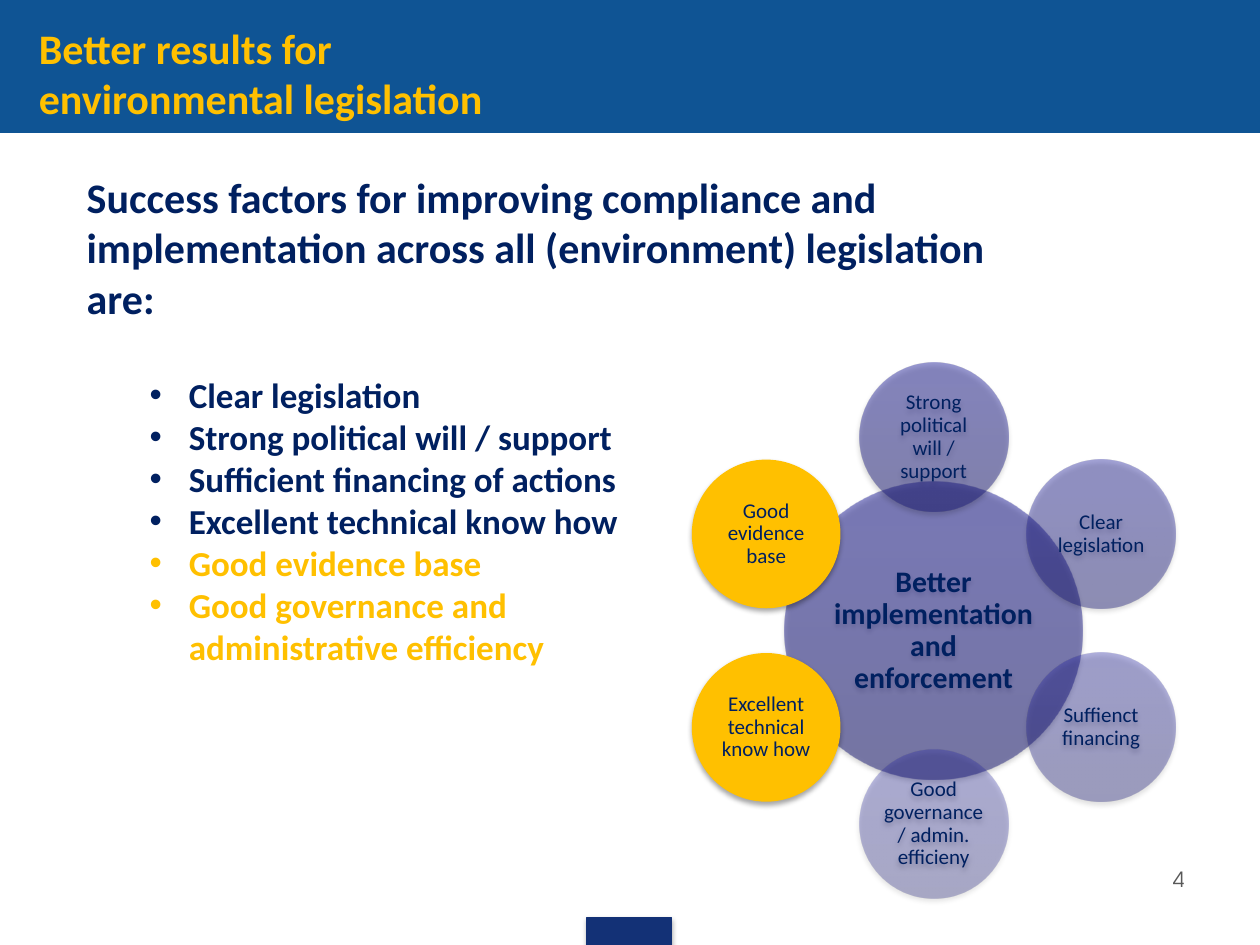
import math

from lxml import etree
from pptx import Presentation
from pptx import util as u
from pptx.dml.color import RGBColor
from pptx.enum import shapes, text
from pptx.oxml import ns

BLUE, NAVY, GOLD = "0F5494", "002060", "FFC000"


def rgb(value):
    """Return the colour for a hex string."""
    return RGBColor.from_string(value)


def sub(parent, tag, **attrs):
    """Append a DrawingML element and return it."""
    el = etree.SubElement(parent, ns.qn(tag))
    for key, value in attrs.items():
        el.set(key, str(value))
    return el


def add_run(p, words, size, color, bold=False, font="Calibri"):
    """Add a formatted run to a paragraph."""
    r = p.add_run()
    r.text = words
    r.font.name, r.font.size, r.font.bold = font, u.Pt(size), bold
    r.font.color.rgb = rgb(color)


def add_shadow(sp):
    """Give a shape a soft shadow below it."""
    sp.shadow.inherit = False
    effects = sp._element.spPr.find(ns.qn("a:effectLst"))
    shadow = sub(effects, "a:outerShdw", blurRad=u.Pt(3.1), dist=u.Pt(1.8),
                 dir=5400000, rotWithShape=0)
    sub(sub(shadow, "a:srgbClr", val="000000"), "a:alpha", val=35000)


def fill_gradient(sp, colors, opacity):
    """Fill a shape with a translucent upward gradient."""
    geometry = sp._element.spPr.find(ns.qn("a:prstGeom"))
    grad = etree.Element(ns.qn("a:gradFill"), rotWithShape="1")
    stops = sub(grad, "a:gsLst")
    for pos, color in zip((0, 80, 100), colors):
        stop = sub(stops, "a:gs", pos=pos * 1000)
        sub(sub(stop, "a:srgbClr", val=color), "a:alpha", val=opacity * 1000)
    sub(grad, "a:lin", ang=16200000, scaled=0)
    geometry.addnext(grad)


def add_bar(s, left, top, width, height, color):
    """Draw a solid bar and return it."""
    sp = s.shapes.add_shape(shapes.MSO_SHAPE.RECTANGLE, u.Inches(left),
                            u.Inches(top), u.Inches(width), u.Inches(height))
    sp.shadow.inherit = False
    sp.fill.solid()
    sp.fill.fore_color.rgb = sp.line.color.rgb = rgb(color)
    sp.line.width = u.Pt(0.75)
    return sp


def add_textbox(s, left, top, width, height):
    """Add a wrapping text box and return its frame."""
    sp = s.shapes.add_textbox(u.Inches(left), u.Inches(top),
                              u.Inches(width), u.Inches(height))
    sp.text_frame.word_wrap = True
    return sp.text_frame


def add_header(s, left, top, width, height):
    """Draw the title band."""
    add_bar(s, left, top, width, height, BLUE)
    tf = add_textbox(s, left + 0.21, top + 0.13, 3.85, 0.91)
    add_run(tf.paragraphs[0], "Better results for environmental legislation",
            24, GOLD, True)


def add_factors(s, left, top, width, height):
    """Write the lead sentence and its bulleted factors."""
    factors = [
        (["Clear legislation"], NAVY),
        (["Strong political will / support"], NAVY),
        (["Sufficient financing of actions"], NAVY),
        (["Excellent technical know how"], NAVY),
        (["Good evidence base"], GOLD),
        (["Good governance and", "administrative efficiency"], GOLD),
    ]
    tf = add_textbox(s, left, top, width, height)
    add_run(tf.paragraphs[0], "Success factors for improving compliance and "
            "implementation across all (environment) legislation are:",
            24, NAVY, True)
    for i, (lines, color) in enumerate(factors):
        p = tf.add_paragraph()
        p.level = 1
        pPr = p._p.get_or_add_pPr()
        pPr.set("marL", str(u.Inches(0.81)))
        pPr.set("indent", str(u.Inches(-0.31)))
        sub(pPr, "a:buFont", typeface="Arial")
        sub(pPr, "a:buChar", char="•")
        if i == 0:
            p.space_before = u.Pt(29)
        for j, line in enumerate(lines):
            if j:
                p.add_line_break()
            add_run(p, line, 20, color, True)


def add_circle(s, cx, cy, size, label, font_size, colors, opacity, bold=False):
    """Draw one labelled circle around a centre point."""
    sp = s.shapes.add_shape(shapes.MSO_SHAPE.OVAL, u.Inches(cx - size / 2),
                            u.Inches(cy - size / 2), u.Inches(size), u.Inches(size))
    sp.line.fill.background()
    if opacity == 100:
        sp.fill.solid()
        sp.fill.fore_color.rgb = rgb(colors[0])
    else:
        fill_gradient(sp, colors, opacity)
    add_shadow(sp)
    tf = sp.text_frame
    tf.word_wrap = True
    tf.vertical_anchor = text.MSO_ANCHOR.MIDDLE
    tf.margin_left = tf.margin_right = u.Inches(0.02)
    tf.margin_top = tf.margin_bottom = u.Inches(0.02)
    p = tf.paragraphs[0]
    p.alignment = text.PP_ALIGN.CENTER
    p.line_spacing = 0.9
    add_run(p, label, font_size, NAVY, bold)


def add_radial(s, left, top, width, height):
    """Draw the hub with six circles spaced evenly clockwise from the top."""
    satellites = [
        ("Strong political will / support", ("191974", "202097", "1E1E9A"), 45),
        ("Clear legislation", ("191976", "212199", "1F1F9C"), 40),
        ("Suffienct financing", ("1A1A78", "22229C", "1F1F9F"), 35),
        ("Good governance / admin. efficieny", ("1A1A7A", "22229E", "2020A2"), 30),
        ("Excellent technical know how", (GOLD,), 100),
        ("Good evidence base", (GOLD,), 100),
    ]
    cx, cy = left + width / 2, top + height / 2
    size = 1.18
    radius = (height - size) / 2
    add_circle(s, cx, cy, 2 * size, "Better implementation and enforcement", 17,
               ("181872", "1F1F94", "1D1D97"), 50, True)
    for i, (label, colors, opacity) in enumerate(satellites):
        angle = i * math.tau / len(satellites)
        add_circle(s, cx + radius * math.sin(angle), cy - radius * math.cos(angle),
                   size, label, 12, colors, opacity)


def add_footer(s, left, top, width, height):
    """Draw the bottom tab and the page number."""
    add_shadow(add_bar(s, left + 4.66, top + 0.45, 0.67, 0.22, "133176"))
    tf = add_textbox(s, left + width - 2.83, top, 2.33, 0.52)
    p = tf.paragraphs[0]
    p.alignment = text.PP_ALIGN.RIGHT
    add_run(p, "4", 12, "595959", font="TeX Gyre Adventor")


def main():
    """Build and save the slide."""
    prs = Presentation()
    prs.slide_width, prs.slide_height = u.Inches(10), u.Inches(7.5)
    s = prs.slides.add_slide(prs.slide_layouts[6])
    add_header(s, 0, 0, 10, 1.05)
    add_factors(s, 0.59, 1.31, 7.64, 4.48)
    add_radial(s, 5.49, 2.88, 3.84, 4.25)
    add_footer(s, 0, 6.83, 10, 0.67)
    prs.save("out.pptx")


if __name__ == "__main__":
    main()
